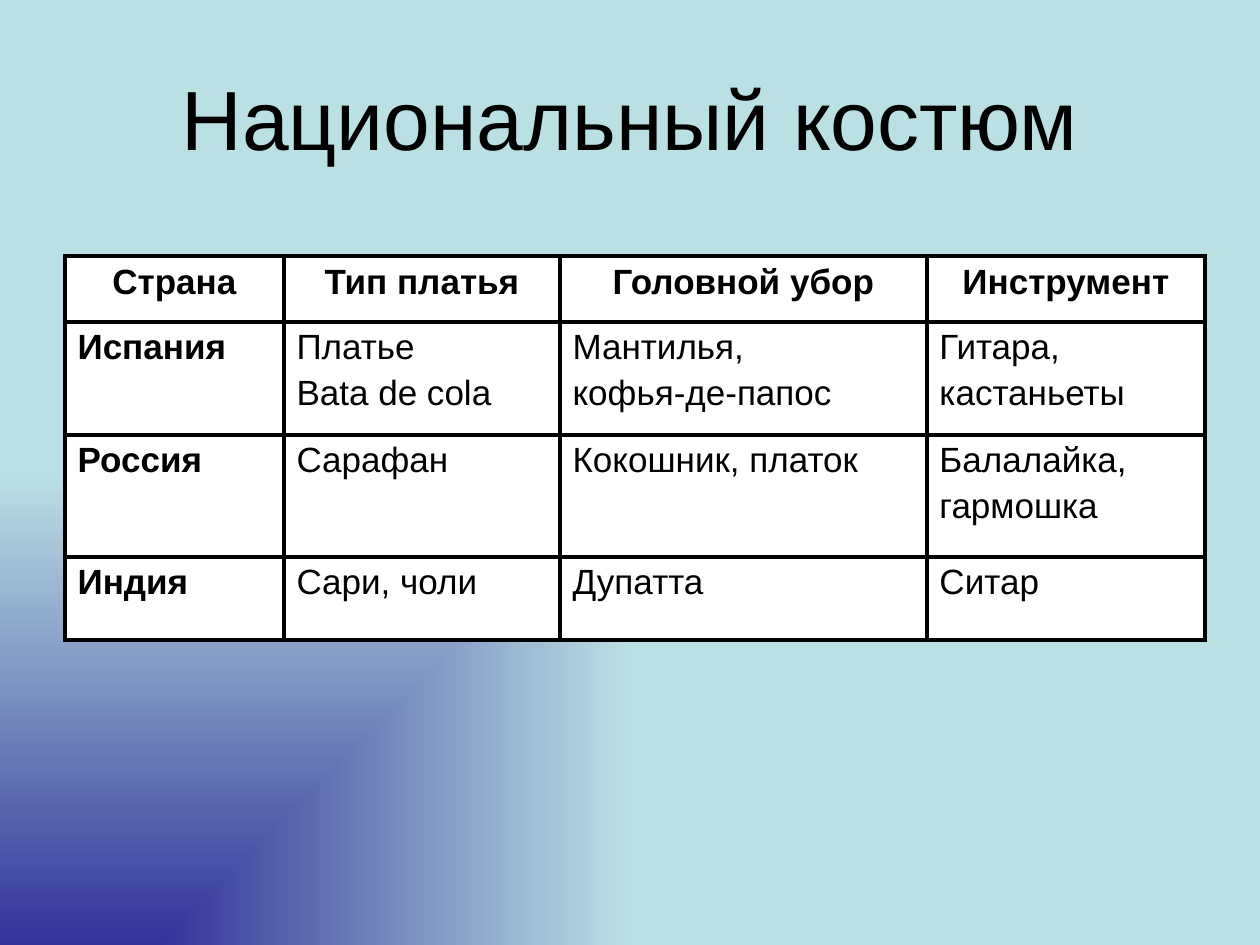
from lxml.etree import SubElement
from pptx import Presentation
from pptx.dml.color import RGBColor
from pptx.enum.text import MSO_ANCHOR, PP_ALIGN
from pptx.oxml import parse_xml
from pptx.oxml.ns import nsdecls, qn
from pptx.util import Emu, Pt

PX = 914400 / 126
COLORS = {"ink": "000000", "cell": "FFFFFF", "glow": "333399", "sky": "BBE0E3"}
COLUMNS = [219, 276, 367, 278]
ROWS = [66, 113, 122, 83]
COSTUMES = [
    ["Страна", "Тип платья", "Головной убор", "Инструмент"],
    ["Испания", "Платье\nBata de cola", "Мантилья,\nкофья-де-папос", "Гитара,\nкастаньеты"],
    ["Россия", "Сарафан", "Кокошник, платок", "Балалайка,\nгармошка"],
    ["Индия", "Сари, чоли", "Дупатта", "Ситар"],
]


def px(n):
    return Emu(round(n * PX))


def rgb(name):
    return RGBColor.from_string(COLORS[name])


class SlideBuilder:
    font = "Arial"
    border = Pt(2.25)

    def __init__(self, slide):
        self.slide = slide

    def background(self, inner, outer):
        """Rectangular gradient spreading from the bottom left corner."""
        fill = self.slide.background.fill
        fill.gradient()
        for stop, name, position in zip(fill.gradient_stops, (inner, outer), (0, 1)):
            stop.color.rgb = rgb(name)
            stop.position = position
        grad = self.slide.background._cSld.find(".//" + qn("a:gradFill"))
        lin = grad.find(qn("a:lin"))
        grad.replace(lin, parse_xml(
            f'<a:path {nsdecls("a")} path="rect">'
            '<a:fillToRect t="100000" r="100000"/></a:path>'))

    def style(self, p, size, bold=False, align=PP_ALIGN.LEFT):
        p.alignment = align
        p.font.name = self.font
        p.font.size = Pt(size)
        p.font.bold = bold
        p.font.color.rgb = rgb("ink")

    def title(self, text, x, y, w, h):
        sp = self.slide.shapes.title
        sp.left, sp.top, sp.width, sp.height = map(px, (x, y, w, h))
        tf = sp.text_frame
        tf.text = text
        tf.vertical_anchor = MSO_ANCHOR.MIDDLE
        self.style(tf.paragraphs[0], 48, align=PP_ALIGN.CENTER)

    def table(self, data, x, y, columns, rows):
        """Bold centred header row and bold first column."""
        table = self.slide.shapes.add_table(
            len(rows), len(columns), px(x), px(y), px(sum(columns)), px(sum(rows))).table
        for column, width in zip(table.columns, columns):
            column.width = px(width)
        for row, height in zip(table.rows, rows):
            row.height = px(height)
        for i, texts in enumerate(data):
            for j, text in enumerate(texts):
                align = PP_ALIGN.LEFT if i else PP_ALIGN.CENTER
                self.cell(table.cell(i, j), text, i == 0 or j == 0, align)

    def cell(self, cell, text, bold, align):
        cell.text = text
        for k, p in enumerate(cell.text_frame.paragraphs):
            self.style(p, 20, bold, align)
            if k:
                p.space_before = Pt(3.5)
        tcPr = cell._tc.get_or_add_tcPr()
        for side in ("a:lnL", "a:lnR", "a:lnT", "a:lnB"):
            ln = SubElement(tcPr, qn(side), w=str(self.border))
            solid = SubElement(ln, qn("a:solidFill"))
            SubElement(solid, qn("a:srgbClr"), val=COLORS["ink"])
        cell.fill.solid()
        cell.fill.fore_color.rgb = rgb("cell")


def main():
    prs = Presentation()
    prs.slide_width, prs.slide_height = px(1260), px(945)
    builder = SlideBuilder(prs.slides.add_slide(prs.slide_layouts[5]))
    builder.background("glow", "sky")
    builder.table(COSTUMES, 65, 256, COLUMNS, ROWS)
    builder.title("Национальный костюм", 63, 38, 1134, 158)
    prs.save("out.pptx")


if __name__ == "__main__":
    main()
